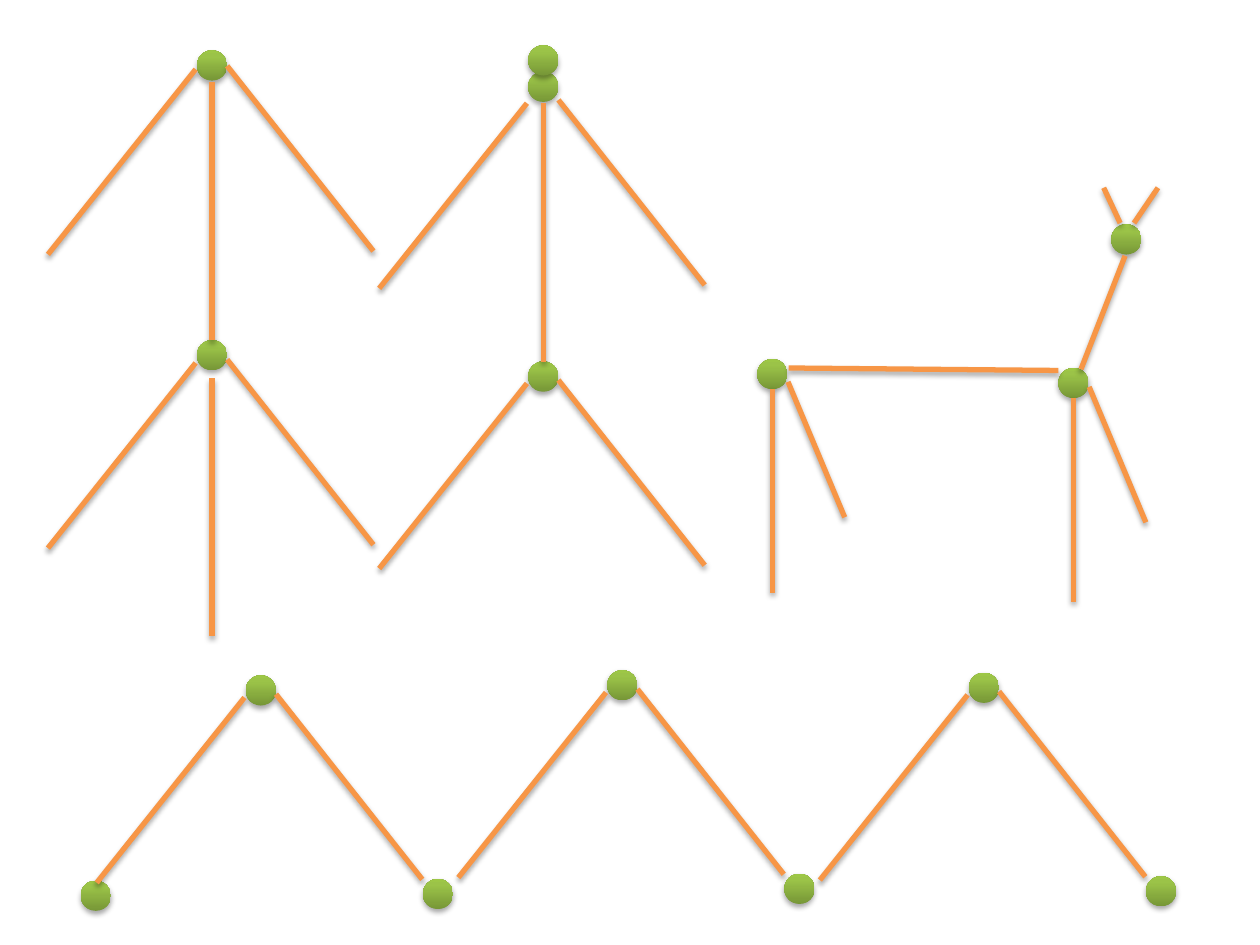
from dataclasses import dataclass

from pptx import Presentation
from pptx.dml.color import RGBColor
from pptx.enum.shapes import MSO_CONNECTOR, MSO_SHAPE
from pptx.oxml import parse_xml
from pptx.oxml.ns import nsdecls
from pptx.util import Pt

OVAL = MSO_SHAPE.OVAL
STRAIGHT = MSO_CONNECTOR.STRAIGHT


@dataclass(frozen=True)
class Theme:
    limb: str = "F79646"
    joint_stops: tuple = ((0, "779737"), (80, "9BC348"), (100, "9DC746"))
    shadow: str = "000000"
    shadow_alpha: int = 35
    limb_width: float = 3
    joint_size: float = 17.3


THEME = Theme()
RADIUS = THEME.joint_size / 2
LIMB_REACH = 84.4   # sideways run of a slanted limb
LIMB_DROP = 105.8
SPINE_LENGTH = 147.6


def add_shadow(shape):
    shape._element.spPr.append(parse_xml(
        f'<a:effectLst {nsdecls("a")}>'
        f'<a:outerShdw blurRad="{Pt(3.1)}" dist="{Pt(1.8)}" dir="5400000" rotWithShape="0">'
        f'<a:srgbClr val="{THEME.shadow}"><a:alpha val="{THEME.shadow_alpha * 1000}"/></a:srgbClr>'
        '</a:outerShdw></a:effectLst>'))


class Figure:
    """A group whose parts are placed relative to its box's left and top."""

    def __init__(self, page, left, top):
        self.group = page.shapes.add_group_shape()
        self.left, self.top = left, top

    def joint(self, x, y):
        dot = self.group.shapes.add_shape(
            OVAL, Pt(self.left + x), Pt(self.top + y),
            Pt(THEME.joint_size), Pt(THEME.joint_size))
        stops = "".join(f'<a:gs pos="{place * 1000}"><a:srgbClr val="{color}"/></a:gs>'
                        for place, color in THEME.joint_stops)
        dot._element.spPr.append(parse_xml(
            f'<a:gradFill {nsdecls("a")} rotWithShape="1"><a:gsLst>{stops}</a:gsLst>'
            '<a:lin ang="16200000" scaled="0"/></a:gradFill>'))
        dot.line.fill.background()
        add_shadow(dot)

    def limb(self, x1, y1, x2, y2):
        line = self.group.shapes.add_connector(
            STRAIGHT, Pt(self.left + x1), Pt(self.top + y1),
            Pt(self.left + x2), Pt(self.top + y2))
        line.line.color.rgb = RGBColor.from_string(THEME.limb)
        line.line.width = Pt(THEME.limb_width)
        add_shadow(line)

    def limb_pair(self, joint_x, y):
        """Two limbs that slope down on either side of a joint."""
        start, right_y = joint_x - 0.7, y - 1.9
        self.limb(start, y, start - LIMB_REACH, y + LIMB_DROP)
        start = joint_x + THEME.joint_size
        self.limb(start, right_y, start + LIMB_REACH - 0.8, right_y + LIMB_DROP)


def draw_person(page, left, top, neck, arms, legs, has_head=False, tail=None):
    figure = Figure(page, left, top)
    x, hip = LIMB_REACH + 0.7, neck + 165.6
    middle = x + RADIUS
    figure.joint(x, neck)
    figure.joint(x, hip)
    figure.limb_pair(x, arms)
    figure.limb(middle, hip - SPINE_LENGTH, middle, hip)
    figure.limb_pair(x, legs)
    if tail is not None:
        figure.limb(middle, tail, middle, tail + SPINE_LENGTH)
    if has_head:
        figure.joint(x, 0)


def draw_zigzag(page, left, top, peak_heights):
    figure = Figure(page, left, top)
    figure.joint(0, 120.2)
    for index, y in enumerate(peak_heights):
        x = 94.3 + 206.6 * index
        figure.joint(x, y)
        figure.limb_pair(x, y + 12.7)
        figure.joint(x + 101.2, y + 116.3)


def draw_animal(page, left, top):
    figure = Figure(page, left, top)
    figure.joint(202.3, 20.9)
    for x, y, slant in ((172.1, 103, 10.8), (0, 97.9, 13)):
        figure.joint(x, y)
        figure.limb(x + RADIUS, y + 17, x + RADIUS, y + 133.5)
        figure.limb(x + 17.6, y + slant, x + 50, y + slant + 77.4)
    figure.limb(18, 103, 172.1, 104.4)
    figure.limb(210.2, 38.9, 185, 103.7)
    figure.limb(198, 0, 207.4, 20.2)
    figure.limb(229, 0, 215.3, 20.2)


def main():
    deck = Presentation()
    deck.slide_width, deck.slide_height = Pt(720), Pt(540)
    page = deck.slides.add_slide(deck.slide_layouts[6])
    draw_person(page, 27.4, 28.8, neck=0, arms=10.8, legs=178.6, tail=187.2)
    draw_person(page, 216.7, 25.9, neck=15.1, arms=33.1, legs=193.2, has_head=True)
    draw_zigzag(page, 46.1, 383, peak_heights=(2.9, 0, 1.4))
    draw_animal(page, 432.7, 107.3)
    deck.save("out.pptx")


if __name__ == "__main__":
    main()
